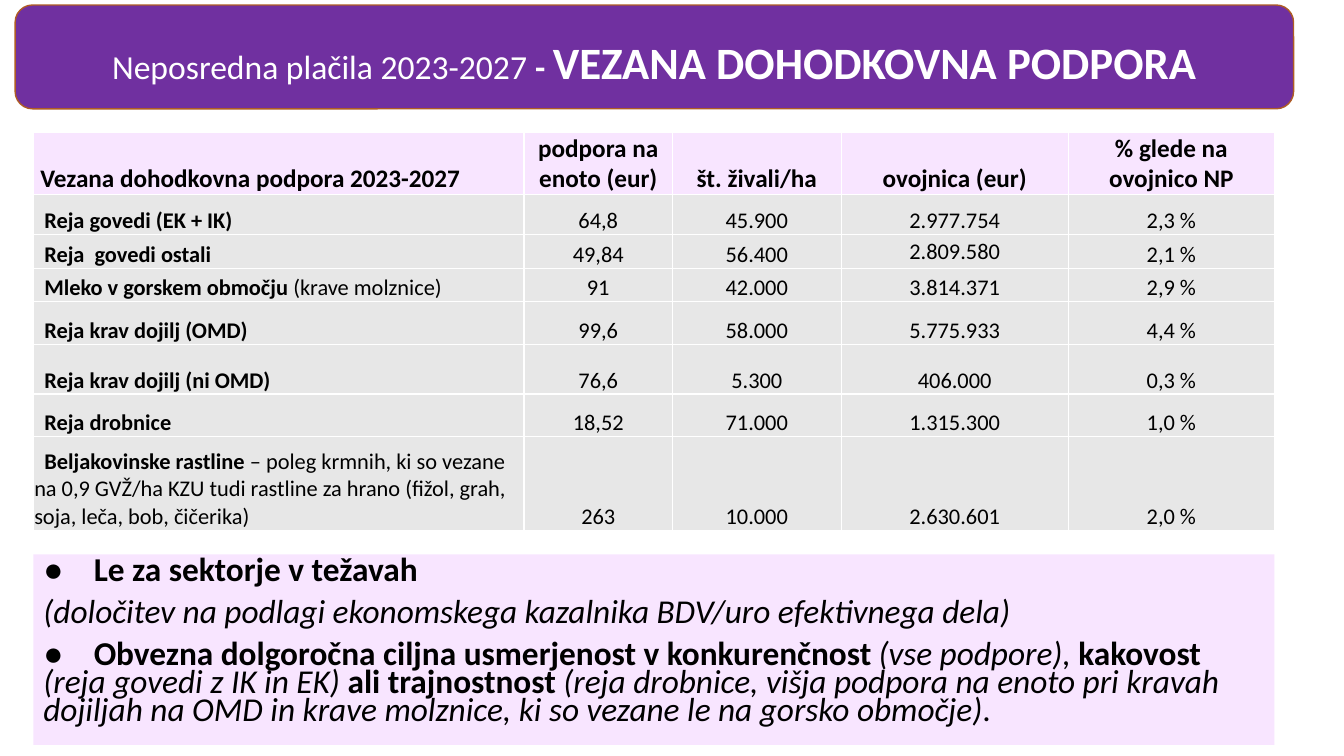
from dataclasses import dataclass
from lxml.etree import SubElement
from pptx import Presentation
from pptx.dml.color import RGBColor
from pptx.enum.shapes import MSO_SHAPE
from pptx.enum.text import MSO_ANCHOR, MSO_AUTO_SIZE, PP_ALIGN
from pptx.oxml.ns import qn
from pptx.util import Inches, Pt


@dataclass(frozen=True)
class Theme:
    font: str = "Calibri"
    mark: str = "Times New Roman"
    violet: str = "7030A0"
    rust: str = "AF5C24"
    lilac: str = "F8E5FF"
    grey: str = "E7E7E7"
    white: str = "FFFFFF"
    black: str = "000000"
    title: float = 32
    lead: float = 24
    body: float = 23.8
    head: float = 18
    cell: float = 16


LOOK = Theme()
WIDE, HIGH = 13.33, 7.5
LEFT, SPAN = 0.33, 12.31  # column shared by the table and the notes

COLS = [4.86, 1.47, 1.67, 2.25, 2.04]
ROWS = [0.62, 0.4, 0.33, 0.33, 0.43, 0.49, 0.42, 0.93]
HEAD = ["Vezana dohodkovna podpora 2023-2027", "podpora na enoto (eur)",
        "št. živali/ha", "ovojnica (eur)", "% glede na ovojnico NP"]
# Each row: bold name, plain remark, four values
DATA = [
    ("Reja govedi (EK + IK)", "", "64,8", "45.900", "2.977.754", "2,3 %"),
    ("Reja  govedi ostali", "", "49,84", "56.400", "2.809.580", "2,1 %"),
    ("Mleko v gorskem območju ", "(krave molznice)",
     "91", "42.000", "3.814.371", "2,9 %"),
    ("Reja krav dojilj (OMD)", "", "99,6", "58.000", "5.775.933", "4,4 %"),
    ("Reja krav dojilj (ni OMD)", "", "76,6", "5.300", "406.000", "0,3 %"),
    ("Reja drobnice", "", "18,52", "71.000", "1.315.300", "1,0 %"),
    ("Beljakovinske rastline ",
     "– poleg krmnih, ki so vezane na 0,9 GVŽ/ha KZU tudi rastline za hrano "
     "(fižol, grah, soja, leča, bob, čičerika)",
     "263", "10.000", "2.630.601", "2,0 %"),
]
# Styles: m mark, b bold, i italic, empty plain
NOTES = [
    [("m", "●\t"), ("b", "Le za sektorje v težavah")],
    [("i", "(določitev na podlagi ekonomskega kazalnika BDV/uro efektivnega dela)")],
    [("m", "●\t"),
     ("b", "Obvezna dolgoročna ciljna usmerjenost v konkurenčnost "),
     ("i", "(vse podpore), "), ("b", "kakovost "),
     ("i", "(reja govedi z IK in EK) "), ("b", "ali trajnostnost "),
     ("i", "(reja drobnice, višja podpora na enoto pri kravah dojiljah na OMD "
           "in krave molznice, ki so vezane le na gorsko območje)"),
     ("", ".")],
]


def rgb(code):
    return RGBColor.from_string(code)


def paint(item, code):
    item.fill.solid()
    item.fill.fore_color.rgb = rgb(code)


def place(shape, box):
    shape.left, shape.top, shape.width, shape.height = map(Inches, box)


def write(para, parts, size, tone=LOOK.black):
    for style, text in parts:
        run = para.add_run()
        run.text = text
        font = run.font
        font.name = LOOK.mark if style == "m" else LOOK.font
        font.size = Pt(size)
        font.bold = style == "b"
        font.italic = style == "i"
        font.color.rgb = rgb(tone)


# Title band: rounded panel behind the title placeholder
def band(slide, box):
    x, y, w, h = box
    title = slide.shapes.title
    panel = slide.shapes.add_shape(MSO_SHAPE.ROUNDED_RECTANGLE, *map(Inches, box))
    panel.shadow.inherit = False
    paint(panel, LOOK.violet)
    panel.line.color.rgb = rgb(LOOK.rust)
    panel.line.width = Pt(1)
    title.element.addprevious(panel.element)

    place(title, (x, y + h * 0.24, w, h * 0.62))
    frame = title.text_frame
    frame.auto_size = MSO_AUTO_SIZE.NONE
    frame.vertical_anchor = MSO_ANCHOR.TOP
    para = frame.paragraphs[0]
    para.alignment = PP_ALIGN.CENTER
    write(para, [("", "Neposredna plačila 2023-2027 "), ("b", "- ")],
          LOOK.lead, LOOK.white)
    write(para, [("b", "VEZANA DOHODKOVNA PODPORA")], LOOK.title, LOOK.white)


def edge(cell):
    props = cell._tc.get_or_add_tcPr()
    for side in ("lnL", "lnR", "lnT", "lnB"):
        line = SubElement(props, qn("a:" + side), w=str(Pt(1)))
        fill = SubElement(line, qn("a:solidFill"))
        SubElement(fill, qn("a:srgbClr"), val=LOOK.white)


def fill_cell(cell, parts, size, tone, inset):
    edge(cell)
    paint(cell, tone)
    cell.vertical_anchor = MSO_ANCHOR.BOTTOM
    cell.margin_left = cell.margin_right = cell.margin_top = Inches(0.01)
    cell.margin_bottom = 0
    para = cell.text_frame.paragraphs[0]
    if inset:  # first-line indent of the name column
        para._p.get_or_add_pPr().set("indent", str(Inches(inset)))
    else:
        para.alignment = PP_ALIGN.CENTER
    write(para, parts, size)


# Support table
def grid(slide, box):
    table = slide.shapes.add_table(len(ROWS), len(COLS), *map(Inches, box)).table
    table.first_row = table.horz_banding = False
    for col, size in zip(table.columns, COLS):
        col.width = Inches(size * box[2] / sum(COLS))
    for row, size in zip(table.rows, ROWS):
        row.height = Inches(size * box[3] / sum(ROWS))
    for c, text in enumerate(HEAD):
        fill_cell(table.cell(0, c), [("b", text)], LOOK.head, LOOK.lilac,
                  0 if c else 0.06)
    for r, (name, more, *nums) in enumerate(DATA, 1):
        parts = [("b", name)] + ([("", more)] if more else [])
        fill_cell(table.cell(r, 0), parts, LOOK.cell, LOOK.grey, 0.1)
        for c, num in enumerate(nums, 1):
            fill_cell(table.cell(r, c), [("", num)], LOOK.cell, LOOK.grey, 0)
    table.cell(2, 3).vertical_anchor = MSO_ANCHOR.MIDDLE


# Notes in the body placeholder
def notes(slide, box):
    body = slide.placeholders[1]
    place(body, box)
    paint(body, LOOK.lilac)
    frame = body.text_frame
    frame.auto_size = MSO_AUTO_SIZE.NONE
    for n, parts in enumerate(NOTES):
        para = frame.add_paragraph() if n else frame.paragraphs[0]
        para.line_spacing = 0.7
        para.space_before = Pt(10 if n else 0)
        props = para._p.get_or_add_pPr()
        props.set("marL", "0")
        props.set("indent", "0")
        SubElement(props, qn("a:buNone"))
        tabs = SubElement(props, qn("a:tabLst"))
        SubElement(tabs, qn("a:tab"), pos=str(Inches(0.36)), algn="l")
        write(para, parts, LOOK.body)


def main():
    deck = Presentation()
    deck.slide_width, deck.slide_height = Inches(WIDE), Inches(HIGH)
    slide = deck.slides.add_slide(deck.slide_layouts[1])
    band(slide, (0.15, 0.05, 12.68, 1.03))
    grid(slide, (LEFT, 1.31, SPAN, 3.95))
    notes(slide, (LEFT, 5.5, SPAN, 1.89))
    deck.save("out.pptx")


if __name__ == "__main__":
    main()
